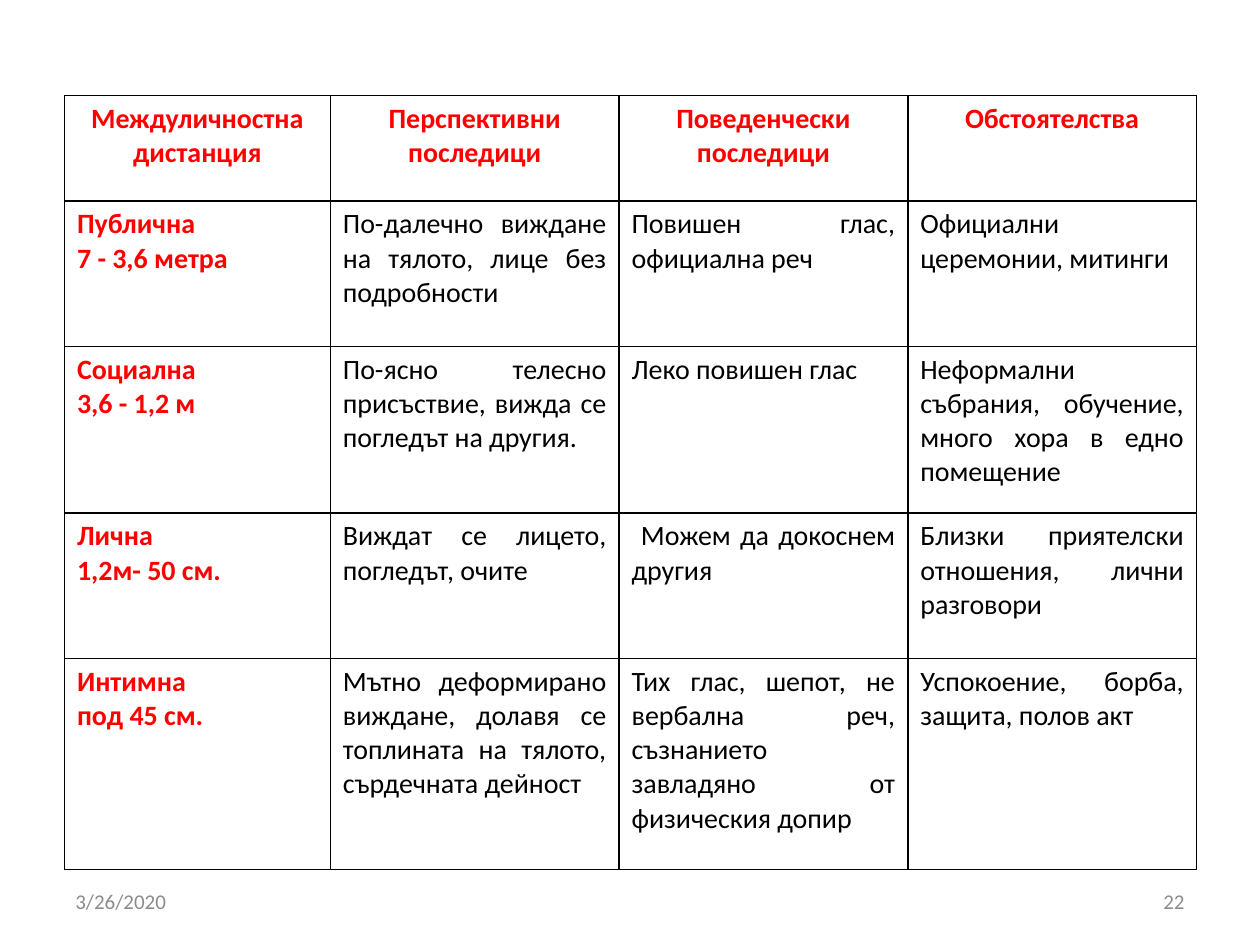
from lxml.etree import SubElement as Sub
from pptx import Presentation as Deck
from pptx.dml.color import RGBColor as RGB
from pptx.enum.text import MSO_ANCHOR as Anchor, PP_ALIGN as Align
from pptx.oxml.ns import qn
from pptx.util import Cm, Pt

RED = RGB(0xFF, 0x00, 0x00)
BLACK = RGB(0x00, 0x00, 0x00)
GREY = RGB(0x8C, 0x8C, 0x8C)
FACE = "Calibri"

COLS = [5.36, 5.82, 5.82, 5.82]
ROWS = [2.12, 2.93, 3.36, 2.93, 4.26]
CELLS = [
    ["Междуличностна\nдистанция", "Перспективни последици",
     "Поведенчески последици", "Обстоятелства"],
    ["Публична\n7 - 3,6 метра",
     "По-далечно виждане на тялото, лице без подробности",
     "Повишен глас, официална реч",
     "Официални церемонии, митинги"],
    ["Социална\n3,6 - 1,2 м",
     "По-ясно телесно присъствие, вижда се погледът на другия.",
     "Леко повишен глас",
     "Неформални събрания, обучение, много хора в едно помещение"],
    ["Лична\n1,2м- 50 см.",
     "Виждат се лицето, погледът, очите",
     " Можем да докоснем другия",
     "Близки приятелски отношения, лични разговори"],
    ["Интимна\nпод 45 см.",
     "Мътно деформирано виждане, долавя се топлината на тялото, "
     "сърдечната дейност",
     "Тих глас, шепот, не вербална реч, съзнанието завладяно от "
     "физическия допир",
     "Успокоение, борба, защита, полов акт"],
]


def write(frame, text, size, color, align, bold=False):
    """Fill a text frame and format all its runs alike."""
    frame.text = text
    for para in frame.paragraphs:
        para.alignment = align
        for run in para.runs:
            font = run.font
            font.name, font.size, font.bold = FACE, Pt(size), bold
            font.color.rgb = color


def frame_cell(cell):
    """Clear the fill of a cell and draw thin black lines around it."""
    props = cell._tc.get_or_add_tcPr()
    for side in ("a:lnL", "a:lnR", "a:lnT", "a:lnB"):
        line = Sub(props, qn(side), w=str(Pt(1)))
        fill = Sub(line, qn("a:solidFill"))
        Sub(fill, qn("a:srgbClr"), val=str(BLACK))
    cell.fill.background()


def add_grid(slide, left, top):
    """Place the table of distances with its top left corner as given."""
    shape = slide.shapes.add_table(len(ROWS), len(COLS), Cm(left), Cm(top),
                                   Cm(sum(COLS)), Cm(sum(ROWS)))
    grid = shape.table
    grid.first_row = grid.horz_banding = False
    for col, width in zip(grid.columns, COLS):
        col.width = Cm(width)
    for i, (row, height) in enumerate(zip(grid.rows, ROWS)):
        row.height = Cm(height)
        for j, cell in enumerate(row.cells):
            head = i == 0 or j == 0
            write(cell.text_frame, CELLS[i][j], 16, RED if head else BLACK,
                  Align.JUSTIFY if i else Align.CENTER, head)
            frame_cell(cell)


def add_foot(slide, left, top, width, height):
    """Place the date and the slide number at the two ends of a box."""
    part = 5.92
    for text, x, align in (("3/26/2020", left, Align.LEFT),
                           ("22", left + width - part, Align.RIGHT)):
        box = slide.shapes.add_textbox(Cm(x), Cm(top), Cm(part), Cm(height))
        frame = box.text_frame
        frame.word_wrap = True
        frame.vertical_anchor = Anchor.MIDDLE
        write(frame, text, 12, GREY, align)


def main():
    """Build the slide and save it."""
    deck = Deck()
    deck.slide_width, deck.slide_height = Cm(25.4), Cm(19.05)
    slide = deck.slides.add_slide(deck.slide_layouts[6])
    add_foot(slide, 1.27, 17.65, 22.86, 1.02)
    add_grid(slide, 1.3, 1.93)
    deck.save("out.pptx")


if __name__ == "__main__":
    main()
